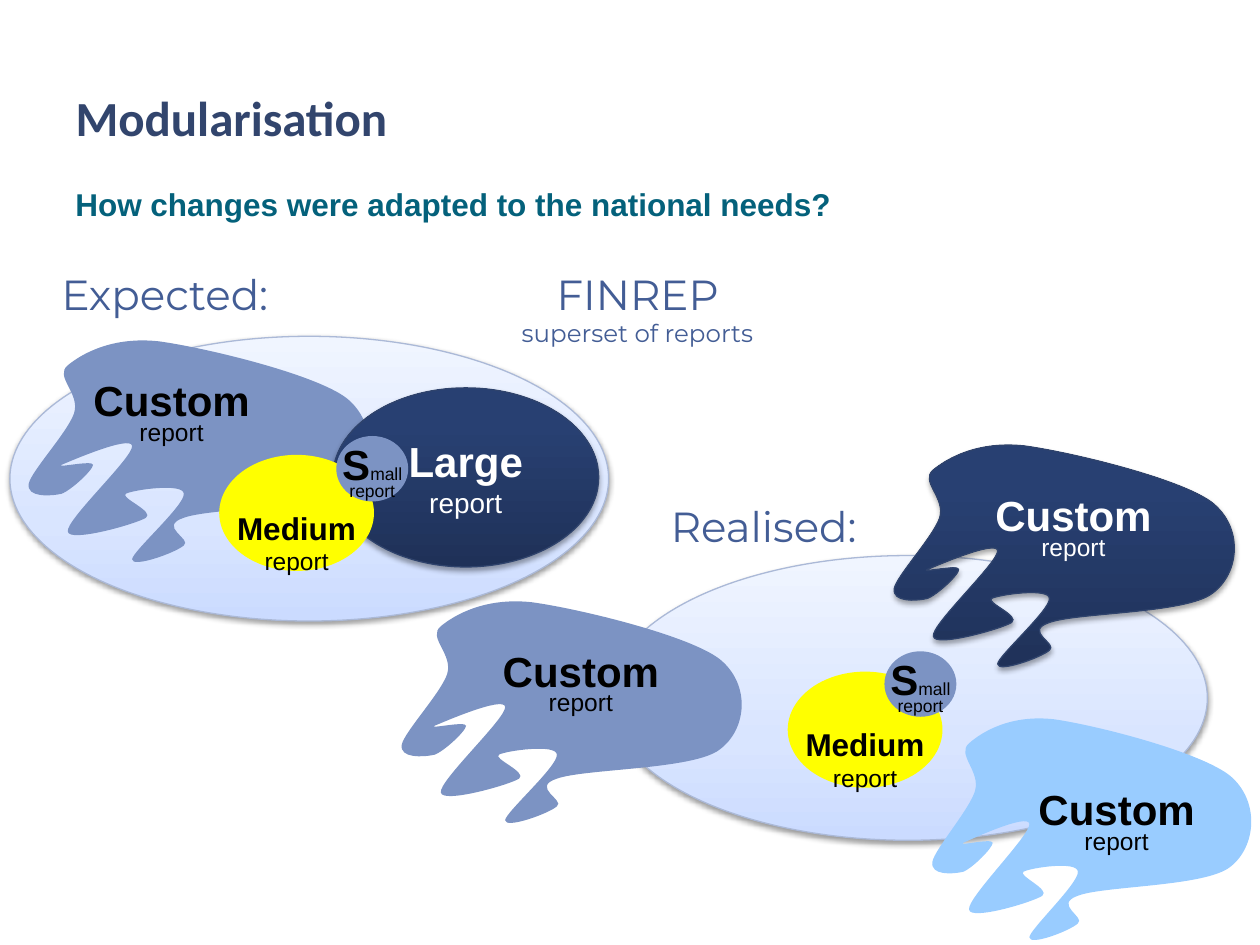
"""Build the Modularisation slide: expected and realised sets of reports."""
from pptx import Presentation
from pptx.dml.color import RGBColor
from pptx.enum.shapes import MSO_SHAPE
from pptx.enum.text import MSO_ANCHOR, PP_ALIGN
from pptx.oxml import parse_xml
from pptx.oxml.ns import nsdecls, qn
from pptx.util import Cm, Pt

OVAL = MSO_SHAPE.OVAL
TOP, MIDDLE = MSO_ANCHOR.TOP, MSO_ANCHOR.MIDDLE
LEFT, CENTER = PP_ALIGN.LEFT, PP_ALIGN.CENTER

NAVY = RGBColor(0x32, 0x45, 0x6D)
TEAL = RGBColor(0x04, 0x61, 0x7B)
HEADING_BLUE = RGBColor(0x43, 0x5D, 0x95)
STEEL = RGBColor(0x7C, 0x93, 0xC3)
SKY = RGBColor(0x99, 0xCC, 0xFF)
YELLOW = RGBColor(0xFF, 0xFF, 0x00)
BLACK = RGBColor(0x00, 0x00, 0x00)
WHITE = RGBColor(0xFF, 0xFF, 0xFF)
PALE_LINE = RGBColor(0xAB, 0xB9, 0xD7)
DARK_LINE = RGBColor(0x2F, 0x43, 0x6C)

PALE = {"stops": [(0, "CBDBFF"), (35, "D9E5FF"), (100, "F0F5FF")],
        "line": PALE_LINE, "shadow": (38, 1.6)}
DARK = {"stops": [(0, "1F3158"), (80, "284072"), (100, "274074")],
        "line": DARK_LINE, "shadow": (35, 1.8)}

LARGE = [([("Large", 24, True)], 1), ([("report", 16, False)], 1)]
MEDIUM = [([("Medium", 18, True)], 1), ([("report", 14, False)], 1)]
SMALL = [([("S", 24, True), ("mall", 10, False)], 1), ([("report", 10, False)], 0.5)]
CUSTOM = [([("Custom", 24, True)], 1), ([("report", 14, False)], 0.7)]

SUPERSET_SIZE = (12.07, 5.74)
LARGE_SIZE = (5.36, 3.61)
MEDIUM_SIZE = (3.12, 2.34)
SMALL_SIZE = (1.45, 1.32)
LABEL_SIZE = (3.66, 1.68)
CLOUD_SIZE = (7.09, 4.7)
NARROW_CLOUD_SIZE = (6.65, 4.7)

EXPECTED = [
    ("oval", (0.2, 6.78), SUPERSET_SIZE, PALE, [], BLACK),
    ("cloud", (0.53, 6.78), CLOUD_SIZE, STEEL, [], BLACK),
    ("oval", (6.71, 7.82), LARGE_SIZE, DARK, LARGE, WHITE),
    ("oval", (4.42, 9.17), MEDIUM_SIZE, YELLOW, MEDIUM, BLACK),
    ("oval", (6.78, 8.79), SMALL_SIZE, STEEL, SMALL, BLACK),
    ("label", (1.63, 7.42), LABEL_SIZE, None, CUSTOM, BLACK),
]
REALISED = [
    ("oval", (12.27, 11.2), SUPERSET_SIZE, PALE, [], BLACK),
    ("cloud", (8.05, 12.04), CLOUD_SIZE, STEEL, [], BLACK),
    ("label", (9.88, 12.88), LABEL_SIZE, None, CUSTOM, BLACK),
    ("oval", (15.88, 13.54), MEDIUM_SIZE, YELLOW, MEDIUM, BLACK),
    ("oval", (17.83, 13.13), SMALL_SIZE, STEEL, SMALL, BLACK),
    ("cloud", (18.75, 14.4), NARROW_CLOUD_SIZE, SKY, [], BLACK),
    ("label", (20.68, 15.67), LABEL_SIZE, None, CUSTOM, BLACK),
    ("cloud", (17.98, 8.89), CLOUD_SIZE, DARK, [], BLACK),
    ("label", (19.81, 9.75), LABEL_SIZE, None, CUSTOM, WHITE),
]
HEADINGS = [
    ((9.96, 5.28), (5.79, 1.88), [("FINREP ", 24, False), ("superset of reports", 14, False)]),
    ((0.43, 5.28), (5.79, 1.3), [("Expected:", 24, False)]),
    ((12.5, 9.96), (5.79, 1.3), [("Realised:", 24, False)]),
]

CLOUD_GRID = (279, 185)
CLOUD_START = (105, 4)
CLOUD_CURVES = [
    ((142, 9), (229, 30), (254, 49)), ((279, 69), (276, 105), (254, 121)),
    ((233, 137), (147, 136), (125, 144)), ((104, 151), (132, 161), (125, 166)),
    ((118, 172), (84, 184), (84, 177)), ((84, 171), (126, 134), (125, 125)),
    ((125, 116), (84, 122), (79, 125)), ((74, 128), (102, 139), (95, 144)),
    ((87, 149), (34, 164), (33, 155)), ((31, 146), (85, 96), (84, 87)),
    ((83, 78), (33, 100), (28, 102)), ((22, 105), (53, 98), (53, 102)),
    ((53, 106), (36, 122), (28, 125)), ((19, 127), (0, 128), (2, 117)),
    ((4, 107), (33, 76), (38, 61)), ((43, 45), (22, 32), (33, 23)),
    ((44, 14), (68, 0), (105, 4)),
]


def point_xml(point):
    return f'<a:pt x="{point[0]}" y="{point[1]}"/>'


def cloud_outline():
    width, height = CLOUD_GRID
    curves = "".join(f'<a:cubicBezTo>{"".join(map(point_xml, curve))}</a:cubicBezTo>'
                     for curve in CLOUD_CURVES)
    return parse_xml(f'<a:path {nsdecls("a")} w="{width}" h="{height}">'
                     f'<a:moveTo>{point_xml(CLOUD_START)}</a:moveTo>{curves}<a:close/></a:path>')


def add_cloud(slide, position, size):
    builder = slide.shapes.build_freeform(*CLOUD_START, scale=Cm(0.03))
    builder.add_line_segments([curve[-1] for curve in CLOUD_CURVES])
    cloud = builder.convert_to_shape()
    cloud.left, cloud.top, cloud.width, cloud.height = map(Cm, position + size)
    outlines = cloud._element.spPr.find(f'{qn("a:custGeom")}/{qn("a:pathLst")}')
    outlines.replace(outlines[0], cloud_outline())
    return cloud


def shadow_effect(alpha, blur, distance):
    return parse_xml(
        f'<a:effectLst {nsdecls("a")}><a:outerShdw blurRad="{Pt(blur)}" dist="{Pt(distance)}" '
        f'dir="5400000" rotWithShape="0"><a:srgbClr val="000000">'
        f'<a:alpha val="{alpha * 1000}"/></a:srgbClr></a:outerShdw></a:effectLst>')


def paint(shape, style):
    shape.shadow.inherit = False
    if isinstance(style, RGBColor):
        shape.fill.solid()
        shape.fill.fore_color.rgb = style
        shape.line.fill.background()
        return
    shape.fill.gradient()
    shape.fill.gradient_angle = 90
    stops = "".join(f'<a:gs pos="{position * 1000}"><a:srgbClr val="{color}"/></a:gs>'
                    for position, color in style["stops"])
    properties = shape._element.spPr
    gradient = properties.find(qn("a:gradFill"))
    gradient.replace(gradient.find(qn("a:gsLst")),
                     parse_xml(f'<a:gsLst {nsdecls("a")}>{stops}</a:gsLst>'))
    shape.line.color.rgb = style["line"]
    shape.line.width = Pt(0.75)
    alpha, distance = style["shadow"]
    properties.replace(properties.find(qn("a:effectLst")), shadow_effect(alpha, 3.1, distance))


def write(shape, lines, color, font="Arial", wrap=False, anchor=TOP, align=CENTER):
    frame = shape.text_frame
    frame.word_wrap = wrap
    frame.vertical_anchor = anchor
    for index, (runs, spacing) in enumerate(lines):
        paragraph = frame.add_paragraph() if index else frame.paragraphs[0]
        paragraph.alignment = align
        paragraph.line_spacing = spacing
        for text, size, bold in runs:
            run = paragraph.add_run()
            run.text = text
            run.font.name = font
            run.font.size = Pt(size)
            run.font.bold = bold
            run.font.color.rgb = color


def add_text(slide, position, size, *args, **options):
    box = slide.shapes.add_textbox(*map(Cm, position + size))
    write(box, *args, **options)
    return box


def add_heading(slide, position, size, runs):
    box = add_text(slide, position, size, [(runs, 1)], HEADING_BLUE, "Montserrat", wrap=True)
    for run in box.text_frame.paragraphs[0].runs:
        run._r.rPr.find(qn("a:solidFill")).addnext(shadow_effect(40, 3, 3))


def add_report(slide, kind, position, size, style, lines, color):
    if kind == "label":
        add_text(slide, position, size, lines, color)
    elif kind == "cloud":
        paint(add_cloud(slide, position, size), style)
    else:
        oval = slide.shapes.add_shape(OVAL, *map(Cm, position + size))
        paint(oval, style)
        write(oval, lines, color, anchor=TOP if lines is MEDIUM else MIDDLE)
        if lines is MEDIUM:
            oval.text_frame.margin_top = Cm(0.74)
            oval.text_frame.margin_bottom = 0


def main():
    presentation = Presentation()
    presentation.slide_width, presentation.slide_height = Cm(25.4), Cm(19.05)
    slide = presentation.slides.add_slide(presentation.slide_layouts[5])
    title = slide.shapes.title
    title.left, title.top, title.width, title.height = map(Cm, (1.27, 0.76, 22.86, 3.18))
    write(title, [([("Modularisation", 28, True)], 1)], NAVY, "Calibri",
          wrap=True, anchor=MIDDLE, align=LEFT)
    question = "How changes were adapted to the national needs?"
    add_text(slide, (1.27, 3.61), (15.98, 1.02), [([(question, 18, True)], 1)], TEAL, align=LEFT)
    for report in EXPECTED + REALISED:
        add_report(slide, *report)
    for heading in HEADINGS:
        add_heading(slide, *heading)
    presentation.save("out.pptx")


if __name__ == "__main__":
    main()
